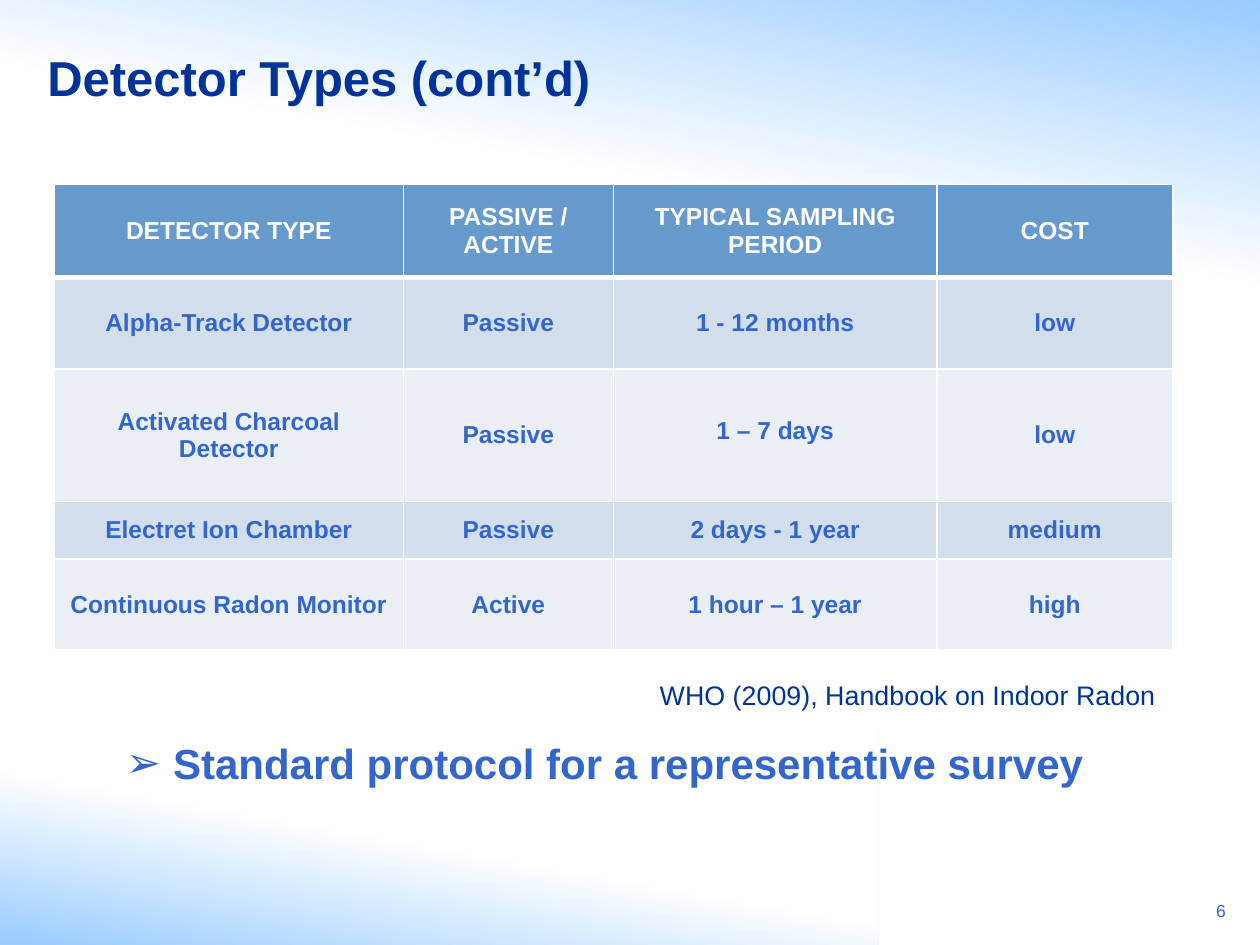
from lxml import etree
from pptx import Presentation
from pptx.dml.color import RGBColor
from pptx.enum.shapes import MSO_SHAPE
from pptx.enum.text import MSO_ANCHOR, PP_ALIGN
from pptx.oxml.ns import qn
from pptx.util import Pt

RECT = MSO_SHAPE.RECTANGLE
TOP, MID = MSO_ANCHOR.TOP, MSO_ANCHOR.MIDDLE
LEFT, MIDDLE, RIGHT = PP_ALIGN.LEFT, PP_ALIGN.CENTER, PP_ALIGN.RIGHT

FONT = "Arial"
HUES = {
    "sky": "99CCFF",
    "white": "FFFFFF",
    "navy": "003399",
    "blue": "3366CC",
    "head": "6699CC",
    "dark": "D3DEEC",
    "light": "EAEFF6",
}
COLS = [199.5, 120, 185, 134.5]
ROWS = [53, 52.5, 75.5, 33, 52]
CELLS = [
    ["DETECTOR TYPE", "PASSIVE /\nACTIVE", "TYPICAL SAMPLING PERIOD", "COST"],
    ["Alpha-Track Detector", "Passive", "1 - 12 months", "low"],
    ["Activated Charcoal Detector", "Passive", "1 – 7 days", "low"],
    ["Electret Ion Chamber", "Passive", "2 days - 1 year", "medium"],
    ["Continuous Radon Monitor", "Active", "1 hour – 1 year", "high"],
]


def hue(name):
    return RGBColor.from_string(HUES[name])


def write(para, text, size, color, bold=False, align=LEFT):
    para.alignment = align
    for i, line in enumerate(text.split("\n")):
        if i:
            para.add_line_break()
        run = para.add_run()
        run.text = line
        run.font.name = FONT
        run.font.size = Pt(size)
        run.font.bold = bold
        run.font.color.rgb = hue(color)


def add_band(slide, box, angle, end):
    band = slide.shapes.add_shape(RECT, *map(Pt, box))
    band.shadow.inherit = False
    band.line.fill.background()
    band.fill.gradient()
    band.fill.gradient_angle = angle
    stops = band.fill.gradient_stops
    for stop, name, place in zip(stops, ("sky", "white"), (0, end)):
        stop.color.rgb = hue(name)
        stop.position = place


def add_label(slide, box, text, size, color, bold=False, align=LEFT, anchor=TOP):
    frame = slide.shapes.add_textbox(*map(Pt, box)).text_frame
    frame.word_wrap = True
    frame.vertical_anchor = anchor
    para = frame.paragraphs[0]
    write(para, text, size, color, bold, align)
    return para


def add_bullet(para, mark, indent):
    props = para._p.get_or_add_pPr()
    props.set("marL", str(Pt(indent)))
    props.set("indent", str(-Pt(indent)))
    etree.SubElement(props, qn("a:buFont")).set("typeface", FONT)
    etree.SubElement(props, qn("a:buChar")).set("char", mark)


def add_edges(cell, base):
    props = cell._tc.get_or_add_tcPr()
    for side, width in zip("LRTB", (1, 1, 1, base)):
        line = etree.SubElement(props, qn(f"a:ln{side}"), w=str(Pt(width)))
        fill = etree.SubElement(line, qn("a:solidFill"))
        etree.SubElement(fill, qn("a:srgbClr"), val=HUES["white"])


def add_grid(slide, left, top):
    size = sum(COLS), sum(ROWS)
    frame = slide.shapes.add_table(
        len(ROWS), len(COLS), *map(Pt, (left, top, *size))
    )
    table = frame.table
    for col, width in zip(table.columns, COLS):
        col.width = Pt(width)
    for r, (row, high) in enumerate(zip(table.rows, ROWS)):
        row.height = Pt(high)
        shade = "head" if r == 0 else "dark" if r % 2 else "light"
        ink = "blue" if r else "white"
        for cell, text in zip(row.cells, CELLS[r]):
            add_edges(cell, 1 if r else 3)
            cell.fill.solid()
            cell.fill.fore_color.rgb = hue(shade)
            cell.vertical_anchor = MID
            write(cell.text_frame.paragraphs[0], text, 14, ink, True, MIDDLE)
    table.cell(2, 2).margin_bottom = Pt(8)


def add_back(slide, wide, high):
    add_band(slide, (0, high - 122.4, 502, 122.4), 80, 0.48)
    add_band(slide, (0, 0, wide, 168), 260, 0.56)


def add_notes(slide, left, top):
    point = add_label(
        slide, (left, top, 618, 45),
        "Standard protocol for a representative survey",
        24, "blue", True, MIDDLE,
    )
    add_bullet(point, "➢", 27)
    add_label(
        slide, (360, top - 34, 307.5, 34),
        "WHO (2009), Handbook on Indoor Radon", 15.3, "navy", align=RIGHT,
    )


def main():
    deck = Presentation()
    wide, high = 720, 540
    deck.slide_width, deck.slide_height = Pt(wide), Pt(high)
    slide = deck.slides.add_slide(deck.slide_layouts[6])
    add_back(slide, wide, high)
    add_label(
        slide, (20, 10, 590, 68), "Detector Types (cont’d)",
        28, "navy", True, anchor=MID,
    )
    add_grid(slide, 31, 105.5)
    add_notes(slide, 36.5, 418)
    add_label(slide, (667.5, 511, 40, 23), "6", 10, "blue", align=RIGHT)
    deck.save("out.pptx")


if __name__ == "__main__":
    main()
